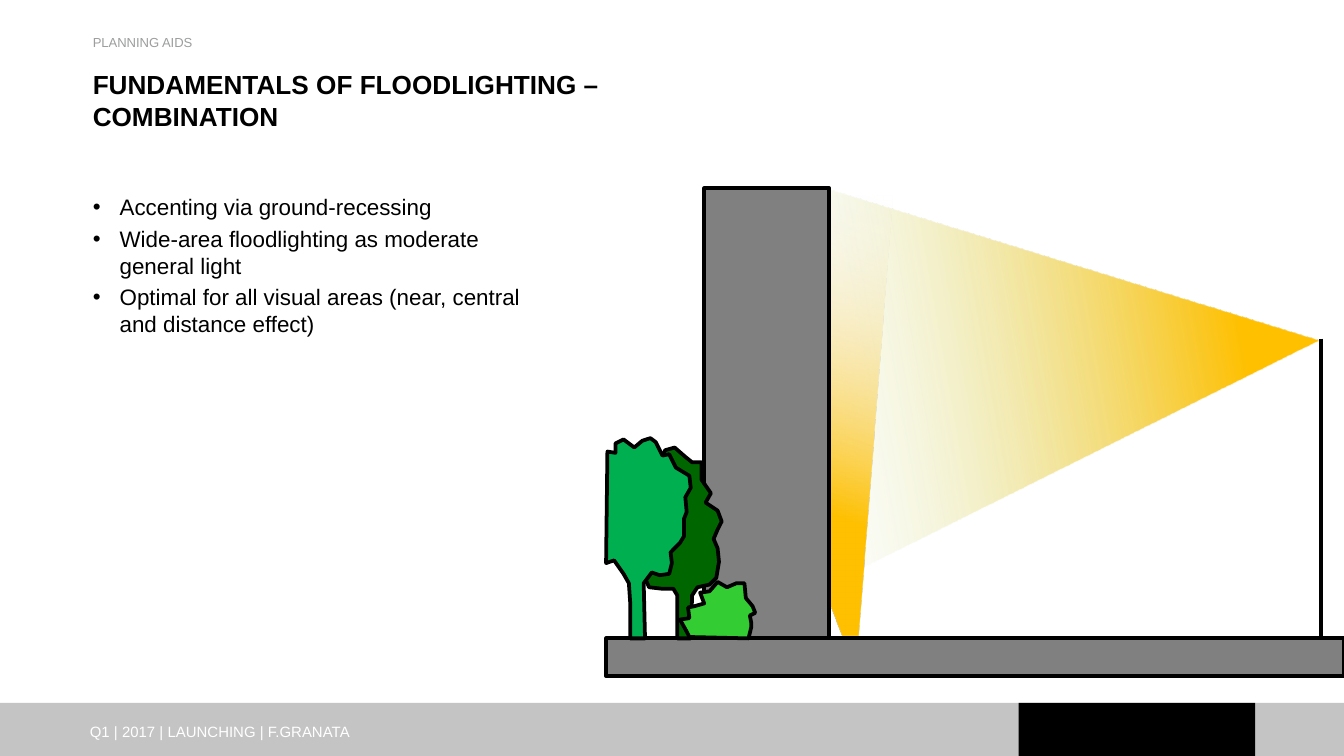
"""Build the floodlighting slide: title, bullet list and a lit building scene."""
from lxml import etree
from pptx import Presentation
from pptx.dml.color import RGBColor
from pptx.enum.shapes import MSO_CONNECTOR, MSO_SHAPE
from pptx.enum.text import MSO_ANCHOR, MSO_AUTO_SIZE, PP_ALIGN
from pptx.oxml.ns import qn
from pptx.util import Pt

PX = 9144
RECTANGLE = MSO_SHAPE.RECTANGLE
STRAIGHT = MSO_CONNECTOR.STRAIGHT
TOP = MSO_ANCHOR.TOP
NO_AUTOFIT = MSO_AUTO_SIZE.NONE
LEFT = PP_ALIGN.LEFT
THEME = {
    "font": "Arial",
    "title": 14, "body": 12, "footer": 8, "kicker": 7, "outline": 2,
    "black": "000000", "white": "FFFFFF", "muted": "9C9D9D",
    "band": "C4C4C4", "concrete": "808080", "light": "FFC000",
    "far glow": "CFE3A7", "near glow": "F2F2F2",
    "dark tree": "006600", "bush": "33CC33", "tree": "00B050",
}


def color(name):
    return RGBColor.from_string(THEME[name])


def write(shape, box, lines, size, ink="black", bold=False, bullet=None):
    shape.left, shape.top, shape.width, shape.height = [value * PX for value in box]
    frame = shape.text_frame
    frame.word_wrap = True
    frame.auto_size = NO_AUTOFIT
    frame.vertical_anchor = TOP
    frame.margin_left = frame.margin_right = 10 * PX
    frame.margin_top = frame.margin_bottom = 5 * PX
    for index, line in enumerate(lines):
        paragraph = frame.add_paragraph() if index else frame.paragraphs[0]
        paragraph.text = line
        properties = paragraph._p.get_or_add_pPr()
        indent = 20 * PX if bullet else 0
        properties.set("marL", str(indent))
        properties.set("indent", str(-indent))
        if bullet:
            etree.SubElement(properties, qn("a:buChar"), char=bullet)
        else:
            etree.SubElement(properties, qn("a:buNone"))
        paragraph.alignment = LEFT
        paragraph.line_spacing = 1.0
        paragraph.space_before = Pt(THEME[size] * 0.2 if index else 0)
        for run in paragraph.runs:
            run.font.name = THEME["font"]
            run.font.size = Pt(THEME[size])
            run.font.bold = bold
            run.font.color.rgb = color(ink)


presentation = Presentation()
presentation.slide_width = 1000 * PX
presentation.slide_height = presentation.slide_width * 9 // 16
slide = presentation.slides.add_slide(presentation.slide_layouts[3])
shapes = slide.shapes
title, body, kicker = slide.placeholders

write(kicker, (59, 21, 874, 24), ["PLANNING AIDS"], "kicker", ink="muted")
write(title, (59, 46, 874, 94), ["FUNDAMENTALS OF FLOODLIGHTING –\vCOMBINATION"],
      "title", bold=True)
write(body, (59, 139, 360, 123), [
    "Accenting via ground-recessing",
    "Wide-area floodlighting as moderate general light",
    "Optimal for all visual areas (near, central and distance effect)",
], "body", bullet="•")

beams = [
    ([(981, 253), (617, 141), (617, 434)], 0.18, "far glow", 190),
    ([(627, 473), (639, 473), (664, 146), (617, 146), (616, 444)],
     0.26, "near glow", 70),
]
for points, start, glow, angle in beams:
    builder = shapes.build_freeform(*points[0], scale=PX)
    builder.add_line_segments(points[1:])
    beam = builder.convert_to_shape()
    beam.shadow.inherit = False
    beam.line.fill.background()
    beam.fill.gradient()
    beam.fill.gradient_angle = angle
    for stop, position, name in zip(beam.fill.gradient_stops, (start, 1), ("light", glow)):
        stop.position = position
        stop.color.rgb = color(name)
    faded = beam._element.spPr.findall(".//" + qn("a:srgbClr"))[-1]
    etree.SubElement(faded, qn("a:alpha"), val="0")

blocks = [
    ((0, 523, 1000, 42), "band", None),
    ((758, 523, 176, 40), "black", None),
    ((451, 475, 549, 28), "concrete", "black"),
    ((524, 140, 93, 335), "concrete", "black"),
]
for box, fill, outline in blocks:
    block = shapes.add_shape(RECTANGLE, *[value * PX for value in box])
    block.shadow.inherit = False
    block.fill.solid()
    block.fill.fore_color.rgb = color(fill)
    if outline:
        block.line.color.rgb = color(outline)
        block.line.width = Pt(THEME["outline"])
    else:
        block.line.fill.background()

plants = {
    "dark tree": [
        (514, 475), (515, 443), (519, 437), (528, 435), (533, 430), (535, 418),
        (534, 408), (531, 401), (534, 394), (537, 388), (534, 380), (525, 374),
        (529, 367), (522, 357), (522, 344), (515, 344), (510, 340), (502, 333),
        (495, 335), (489, 346), (476, 352), (472, 369), (474, 385), (467, 392),
        (474, 417), (483, 437), (492, 438), (501, 438), (504, 443), (504, 475)],
    "bush": [
        (557, 475), (559, 467), (559, 463), (558, 458), (562, 456), (560, 451),
        (555, 445), (554, 434), (548, 434), (541, 437), (534, 433), (528, 440),
        (521, 441), (524, 449), (517, 451), (512, 452), (513, 460), (506, 461),
        (511, 470), (513, 474)],
    "tree": [
        (469, 475), (480, 475), (479, 434), (485, 426), (491, 428), (498, 427),
        (500, 419), (499, 411), (506, 404), (509, 399), (509, 386), (511, 381),
        (510, 370), (514, 363), (513, 354), (503, 348), (498, 338), (493, 339),
        (488, 329), (484, 326), (478, 328), (472, 333), (464, 327), (458, 330),
        (458, 337), (452, 336), (451, 419), (457, 417), (464, 427), (468, 434),
        (469, 449)],
}
for name, points in plants.items():
    builder = shapes.build_freeform(*points[0], scale=PX)
    builder.add_line_segments(points[1:])
    plant = builder.convert_to_shape()
    plant.shadow.inherit = False
    plant.fill.solid()
    plant.fill.fore_color.rgb = color(name)
    plant.line.color.rgb = color("black")
    plant.line.width = Pt(THEME["outline"])

mast = shapes.add_connector(STRAIGHT, 983 * PX, 252 * PX, 983 * PX, 474 * PX)
mast.line.color.rgb = color("black")
mast.line.width = Pt(THEME["outline"])
etree.SubElement(mast._element.spPr, qn("a:effectLst"))

footer = shapes.add_textbox(0, 0, PX, PX)
write(footer, (57, 533, 285, 16), ["Q1 | 2017 | LAUNCHING | F.GRANATA"], "footer", ink="white")

presentation.save("out.pptx")
